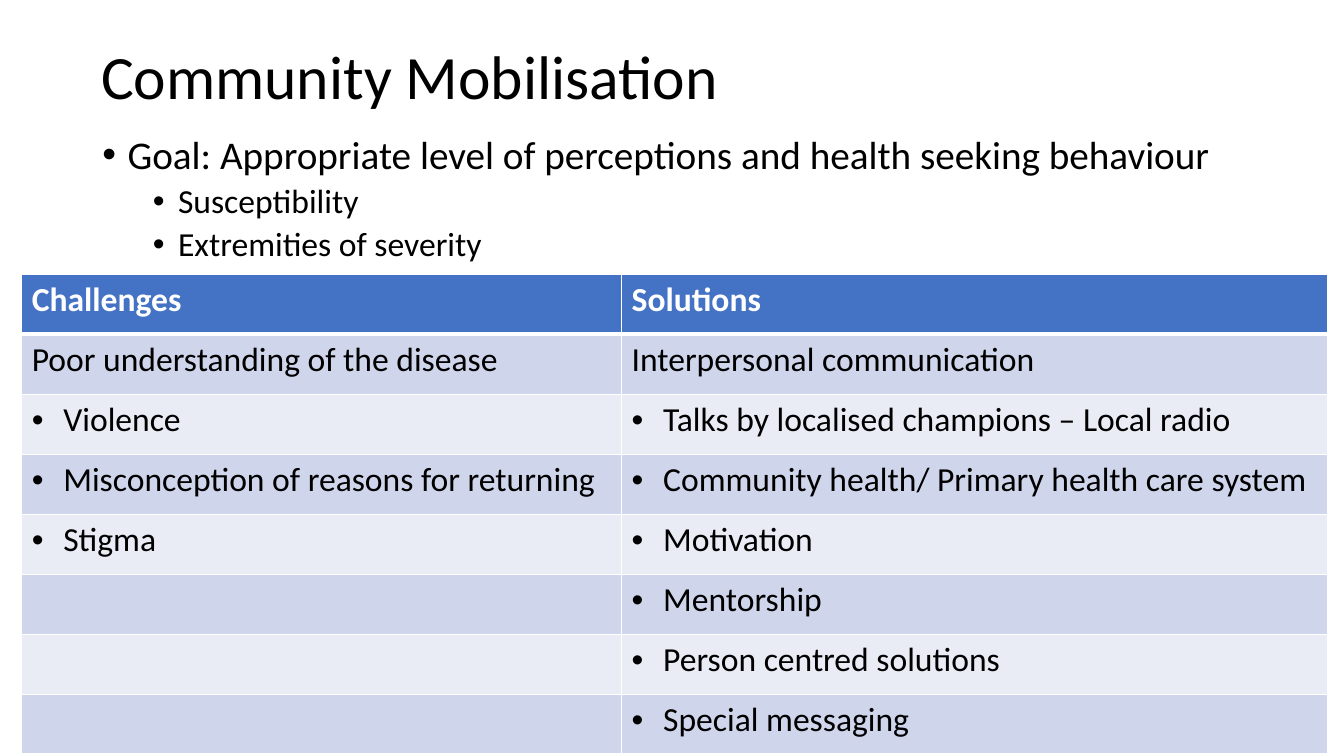
from dataclasses import dataclass

from lxml import etree
from pptx import Presentation
from pptx.dml.color import RGBColor
from pptx.enum.text import MSO_ANCHOR, MSO_AUTO_SIZE, PP_ALIGN
from pptx.oxml.ns import qn
from pptx.util import Pt

LEFT = PP_ALIGN.LEFT
TOP, MIDDLE = MSO_ANCHOR.TOP, MSO_ANCHOR.MIDDLE
NO_FIT = MSO_AUTO_SIZE.NONE


@dataclass(frozen=True)
class Theme:
    font: str = "Calibri"
    title: int = 44
    goal: int = 28
    text: int = 24
    ink: str = "000000"
    white: str = "FFFFFF"
    head: str = "4472C4"
    bands: tuple = ("CFD5EA", "E9EBF5")


THEME = Theme()

GOALS = [
    ("Goal: Appropriate level of perceptions and health seeking behaviour", 0),
    ("Susceptibility", 1),
    ("Extremities of severity", 1),
]
ROWS = [
    ("Challenges", "Solutions"),
    ("Poor understanding of the disease", "Interpersonal communication"),
    ("Violence", "Talks by localised champions – Local radio"),
    ("Misconception of reasons for returning",
     "Community health/ Primary health care system"),
    ("Stigma", "Motivation"),
    ("", "Mentorship"),
    ("", "Person centred solutions"),
    ("", "Special messaging"),
]


def write(para, text, size=THEME.text, color=THEME.ink, bold=False,
          level=0, margin=0, hang=0, line=1.0, before=0):
    para.alignment = LEFT
    para.level = level
    para.line_spacing = line
    para.space_before = Pt(before)
    props = para._p.get_or_add_pPr()
    props.set("marL", str(Pt(margin)))
    props.set("indent", str(Pt(-hang)))
    if hang:
        etree.SubElement(props, qn("a:buFont"), typeface="Arial")
        etree.SubElement(props, qn("a:buChar"), char="•")
    run = para.add_run()
    run.text = text
    font = run.font
    font.name, font.size, font.bold = THEME.font, Pt(size), bold
    font.color.rgb = RGBColor.from_string(color)


def place(shape, box, anchor):
    shape.left, shape.top, shape.width, shape.height = map(Pt, box)
    frame = shape.text_frame
    frame.word_wrap = True
    frame.auto_size = NO_FIT
    frame.vertical_anchor = anchor
    return frame


def add_title(slide, box):
    frame = place(slide.shapes.title, box, MIDDLE)
    write(frame.paragraphs[0], "Community Mobilisation",
          size=THEME.title, line=0.9)


def add_goals(slide, box):
    frame = place(slide.placeholders[1], box, TOP)
    for i, (text, level) in enumerate(GOALS):
        para = frame.add_paragraph() if i else frame.paragraphs[0]
        write(para, text, size=THEME.text if level else THEME.goal,
              level=level, margin=18 + 36 * level, hang=18,
              line=0.9, before=5 if level else 10)


def add_edge(cell, side, width):
    edge = etree.SubElement(cell._tc.get_or_add_tcPr(), qn(f"a:ln{side}"),
                            w=str(Pt(width)))
    fill = etree.SubElement(edge, qn("a:solidFill"))
    etree.SubElement(fill, qn("a:srgbClr"), val=THEME.white)


def add_grid(slide, box, split):
    left, top, width, height = box
    grid = slide.shapes.add_table(len(ROWS), 2, *map(Pt, box)).table
    for col, size in zip(grid.columns, (split, width - split)):
        col.width = Pt(size)
    for r, texts in enumerate(ROWS):
        grid.rows[r].height = Pt(height / len(ROWS))
        for c, text in enumerate(texts):
            cell = grid.cell(r, c)
            for side in "LRTB":
                thick = (r, side) in ((0, "B"), (1, "T"))
                add_edge(cell, side, 3 if thick else 1)
            shade = THEME.bands[(r - 1) % 2] if r else THEME.head
            cell.fill.solid()
            cell.fill.fore_color.rgb = RGBColor.from_string(shade)
            if text:
                inset = 22.5 if r > 1 else 0
                write(cell.text_frame.paragraphs[0], text, bold=r == 0,
                      color=THEME.ink if r else THEME.white,
                      margin=inset, hang=inset)


def main():
    deck = Presentation()
    deck.slide_width, deck.slide_height = Pt(960), Pt(540)
    slide = deck.slides.add_slide(deck.slide_layouts[1])
    add_title(slide, (65, 4.5, 828, 104))
    add_goals(slide, (66, 93, 828, 123))
    add_grid(slide, (15.5, 196, 933, 342.8), 428.5)
    deck.save("out.pptx")


if __name__ == "__main__":
    main()
